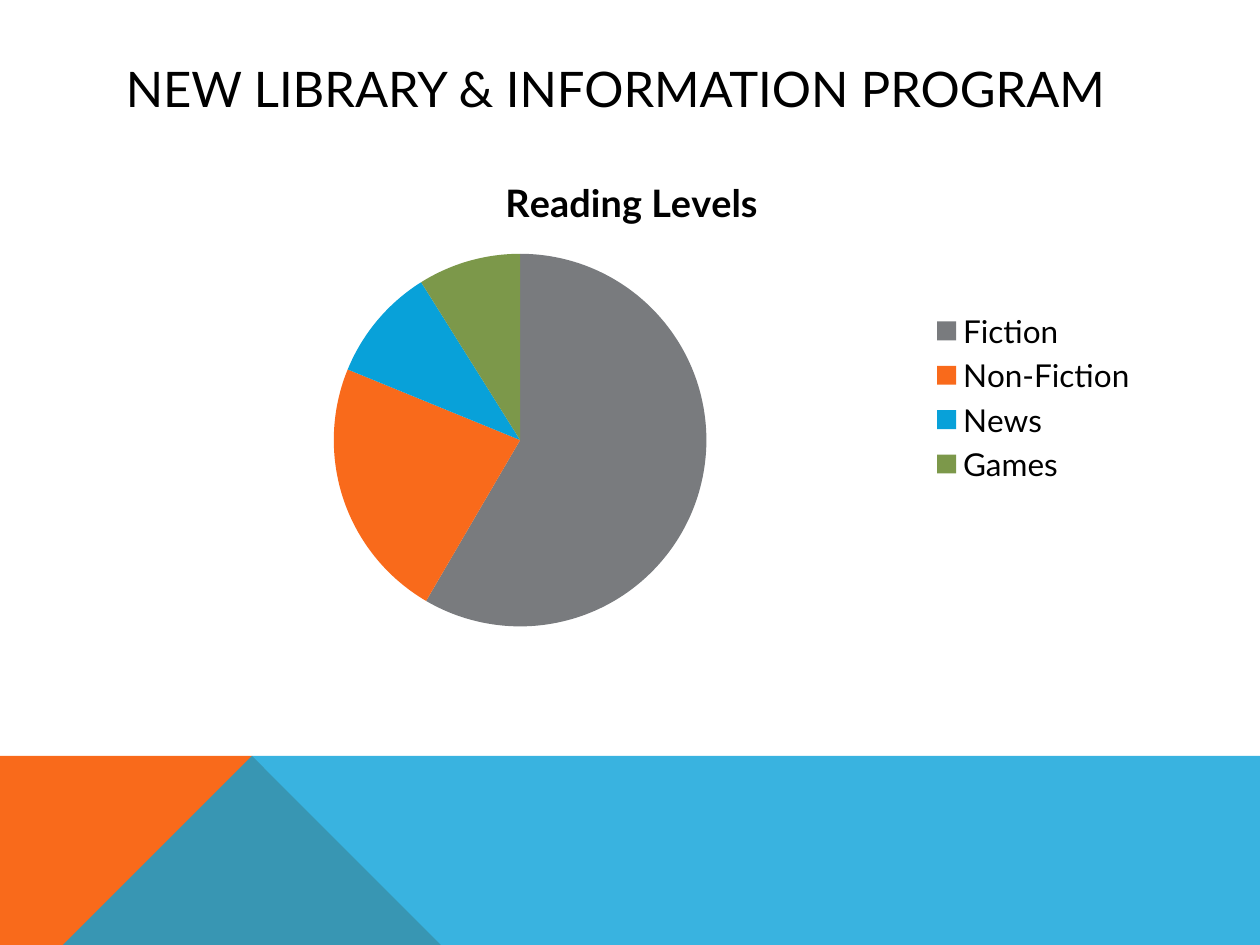
import pptx
import pptx.chart.data
import pptx.dml.color
import pptx.enum.chart
import pptx.enum.text
import pptx.oxml
import pptx.oxml.ns
import pptx.util
from pptx.util import Inches

FONT = "Lato"
BLACK, ORANGE, BLUE = "000000", "F96A1B", "08A1D9"
GREY, GREEN = "797B7E", "7C984A"


def rgb(color):
    return pptx.dml.color.RGBColor.from_string(color)


def set_font(font, size, bold=False):
    font.name = FONT
    font.size = pptx.util.Pt(size)
    font.bold = bold
    font.color.rgb = rgb(BLACK)


def add_polygon(slide, points, color, opacity=100):
    builder = slide.shapes.build_freeform(*points[0], scale=Inches(1))
    builder.add_line_segments(points[1:], close=True)
    sp = builder.convert_to_shape()
    sp.shadow.inherit = False
    sp.fill.solid()
    sp.fill.fore_color.rgb = rgb(color)
    sp.line.fill.background()
    if opacity < 100:
        clr = sp.fill._xPr.find(".//" + pptx.oxml.ns.qn("a:srgbClr"))
        clr.append(pptx.oxml.parse_xml(
            f'<a:alpha {pptx.oxml.ns.nsdecls("a")} val="{opacity * 1000}"/>'))


def add_footer_band(slide, left, top, width, height):
    right, bottom = left + width, top + height
    peak = (left + 2.23, top)
    # Orange wedge, then the translucent blue band over it
    add_polygon(slide, [(left, bottom), (left, top), peak,
                        (left + 3.91, bottom)], ORANGE)
    add_polygon(slide, [(left, bottom), peak, (right, top),
                        (right, bottom)], BLUE, 80)


def add_title(slide, left, top, width, height):
    tf = slide.shapes.add_textbox(Inches(left), Inches(top),
                                  Inches(width), Inches(height)).text_frame
    tf.word_wrap = True
    tf.vertical_anchor = pptx.enum.text.MSO_ANCHOR.MIDDLE
    p = tf.paragraphs[0]
    p.text = "NEW LIBRARY & INFORMATION PROGRAM"
    set_font(p.font, 28)


def add_reading_chart(slide, left, top, width, height):
    levels = [("Fiction", 59, GREY), ("Non-Fiction", 23, ORANGE),
              ("News", 10, BLUE), ("Games", 9, GREEN)]
    data = pptx.chart.data.CategoryChartData()
    data.categories = [name for name, _, _ in levels]
    data.add_series("Reading Levels", [value for _, value, _ in levels])
    chart = slide.shapes.add_chart(
        pptx.enum.chart.XL_CHART_TYPE.PIE, Inches(left), Inches(top),
        Inches(width), Inches(height), data).chart
    set_font(chart.font, 18)

    # Chart title
    chart.has_title = True
    p = chart.chart_title.text_frame.paragraphs[0]
    p.text = "Reading Levels"
    set_font(p.font, 21.6, bold=True)
    chart.chart_title.include_in_layout = False

    # Legend
    chart.has_legend = True
    chart.legend.position = pptx.enum.chart.XL_LEGEND_POSITION.RIGHT
    chart.legend.include_in_layout = False

    # Slice colours
    plot = chart.plots[0]
    plot.vary_by_categories = True
    for i, (_, _, color) in enumerate(levels):
        fill = plot.series[0].points[i].format.fill
        fill.solid()
        fill.fore_color.rgb = rgb(color)


def main():
    prs = pptx.Presentation()
    prs.slide_width, prs.slide_height = Inches(10), Inches(7.5)
    slide = prs.slides.add_slide(prs.slide_layouts[6])
    add_footer_band(slide, 0, 5.52, 10, 1.98)
    add_title(slide, 0.9, 0.4, 8.22, 0.6)
    add_reading_chart(slide, 0.9, 1.2, 8.23, 3.91)
    prs.save("out.pptx")


if __name__ == "__main__":
    main()
